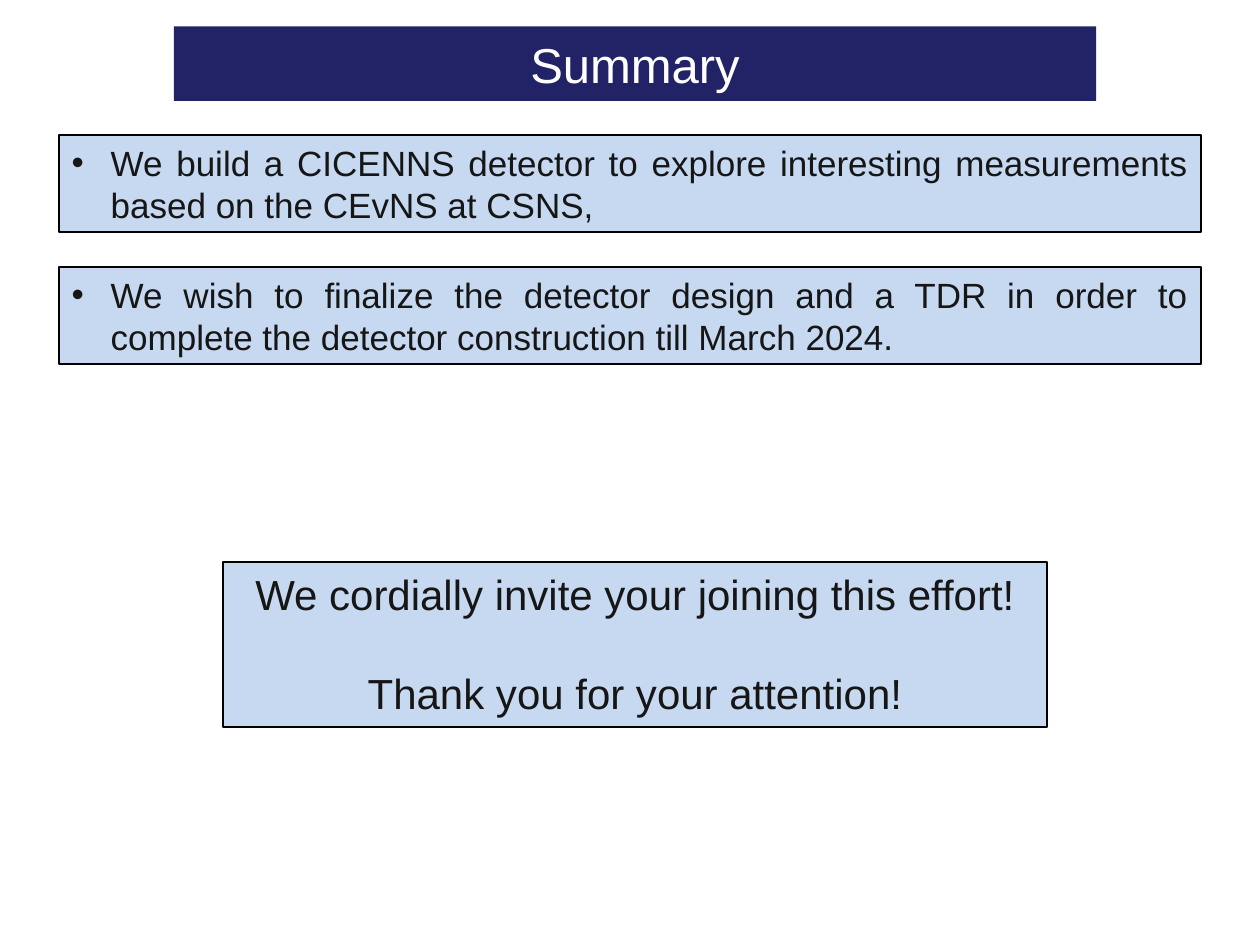
from dataclasses import dataclass

from lxml.etree import SubElement
from pptx import Presentation
from pptx.dml.color import RGBColor
from pptx.enum.text import MSO_ANCHOR, MSO_AUTO_SIZE, PP_ALIGN
from pptx.oxml.ns import qn
from pptx.util import Inches, Pt

WIDE, HIGH = Inches(10), Inches(7.5)
NAVY, PALE, INK, WHITE, BLACK = "222267", "C6D9F1", "161616", "FFFFFF", "000000"
TOP, STEP = 0.1427, 0.14


@dataclass
class Area:
    """A rectangle given as shares of the slide's size."""
    left: float
    top: float
    width: float
    height: float

    def place(self) -> tuple:
        """Return left, top, width and height as lengths."""
        return (int(self.left * WIDE), int(self.top * HIGH),
                int(self.width * WIDE), int(self.height * HIGH))


@dataclass
class Panel:
    """A framed pale box with its lines of text."""
    area: Area
    lines: list
    size: int
    align: PP_ALIGN
    bullet: bool = False


def tint(code: str) -> RGBColor:
    """Turn a hex string into a colour."""
    return RGBColor.from_string(code)


def paint(shape, code: str) -> None:
    """Fill a shape with one colour."""
    shape.fill.solid()
    shape.fill.fore_color.rgb = tint(code)


def style(para, size: int, code: str, align: PP_ALIGN) -> None:
    """Set the font and alignment of a paragraph."""
    para.alignment = align
    para.font.name = "Arial"
    para.font.size = Pt(size)
    para.font.color.rgb = tint(code)


def indent(para, left: float, first: float) -> None:
    """Set the left margin and the first-line indent in inches."""
    props = para._p.get_or_add_pPr()
    props.set("marL", str(Inches(left)))
    props.set("indent", str(Inches(first)))


def dot(para) -> None:
    """Give a paragraph a hanging round bullet."""
    indent(para, 0.31, -0.31)
    props = para._p.get_or_add_pPr()
    SubElement(props, qn("a:buFont")).set("typeface", "Arial")
    SubElement(props, qn("a:buChar")).set("char", "•")


def draw_title(slide, text: str, area: Area) -> None:
    """Turn the title placeholder into a banner."""
    title = slide.shapes.title
    title.left, title.top, title.width, title.height = area.place()
    paint(title, NAVY)
    frame = title.text_frame
    frame.text = text
    frame.auto_size = MSO_AUTO_SIZE.NONE
    frame.vertical_anchor = MSO_ANCHOR.MIDDLE
    style(frame.paragraphs[0], 28, WHITE, PP_ALIGN.CENTER)


def draw_panel(slide, panel: Panel):
    """Draw a panel and return its paragraphs."""
    box = slide.shapes.add_textbox(*panel.area.place())
    paint(box, PALE)
    box.line.color.rgb = tint(BLACK)
    box.line.width = Pt(1)
    frame = box.text_frame
    frame.text = "\n".join(panel.lines)
    frame.word_wrap = True
    frame.auto_size = MSO_AUTO_SIZE.SHAPE_TO_FIT_TEXT
    for para in frame.paragraphs:
        if panel.bullet:
            dot(para)
        style(para, panel.size, INK, panel.align)
    return frame.paragraphs


def main() -> None:
    """Build and save the summary slide."""
    deck = Presentation()
    deck.slide_width, deck.slide_height = WIDE, HIGH
    slide = deck.slides.add_slide(deck.slide_layouts[5])
    draw_title(slide, "Summary", Area(0.138, 0.028, 0.732, 0.0787))

    points = [
        "We build a CICENNS detector to explore interesting measurements "
        "based on the CEvNS at CSNS,",
        "We wish to finalize the detector design and a TDR in order to "
        "complete the detector construction till March 2024.",
    ]
    for row, point in enumerate(points):
        area = Area(0.047, TOP + row * STEP, 0.906, 0.1027)
        draw_panel(slide, Panel(area, [point], 20, PP_ALIGN.JUSTIFY, True))

    closing = Panel(Area(0.177, 0.5947, 0.654, 0.1747),
                    ["We cordially invite your joining this effort!",
                     "Thank you for your attention!"], 24, PP_ALIGN.CENTER)
    invite, thanks = draw_panel(slide, closing)
    indent(invite, 0, -0.2)
    thanks.space_before = Pt(28)
    deck.save("out.pptx")


if __name__ == "__main__":
    main()
